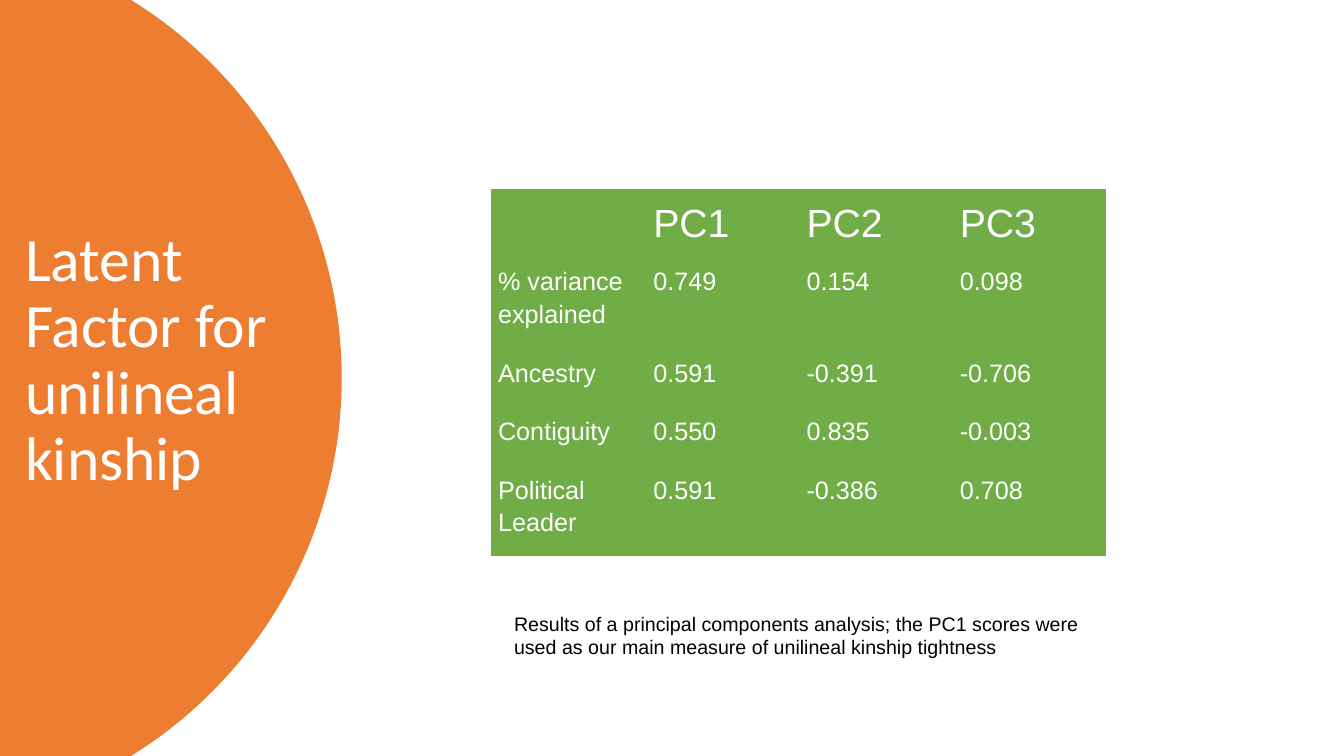
import math

import pptx
import pptx.dml.color
import pptx.enum.text
import pptx.util

COLOURS = {"orange": "ED7D31", "green": "70AD47", "white": "FFFFFF", "black": "000000"}
PX = 9144
PLAIN_TABLE_STYLE = "{2D5ABB26-0587-4C30-8999-92F81FD0307C}"


def px(length):
    return pptx.util.Emu(round(length * PX))


def colour(name):
    return pptx.dml.color.RGBColor.from_string(COLOURS[name])


class SlideBuilder:
    def __init__(self, deck):
        self.page = deck.slides.add_slide(deck.slide_layouts[6])

    def style(self, para, size, font, ink, spacing=1.0):
        para.line_spacing = spacing
        for item in (para, *para.runs):
            item.font.size = pptx.util.Pt(size)
            item.font.name = font
            item.font.color.rgb = colour(ink)

    def rounded_panel(self, left, start, radius, centre_x, height, fill):
        middle = height / 2
        limit = math.asin(middle / radius)
        steps = 120
        angles = [limit * (2 * step / steps - 1) for step in range(steps + 1)]
        points = [
            (px(centre_x + radius * math.cos(angle)), px(middle + radius * math.sin(angle)))
            for angle in angles
        ]
        outline = self.page.shapes.build_freeform(px(left), px(start))
        outline.add_line_segments(points + [(px(left), px(height))])
        panel = outline.convert_to_shape()
        panel.shadow.inherit = False
        panel.fill.solid()
        panel.fill.fore_color.rgb = colour(fill)
        panel.line.fill.background()

    def text(self, words, place, size, font, ink, anchor="TOP", spacing=1.0):
        box = self.page.shapes.add_textbox(*map(px, place))
        frame = box.text_frame
        frame.word_wrap = True
        frame.vertical_anchor = pptx.enum.text.MSO_ANCHOR[anchor]
        frame.text = words
        for para in frame.paragraphs:
            self.style(para, size, font, ink, spacing)

    def table(self, rows, left, top, widths, heights, fill, ink):
        frame = self.page.shapes.add_table(
            len(rows), len(widths), px(left), px(top), px(sum(widths)), px(sum(heights))
        )
        table = frame.table
        table.first_row = table.horz_banding = False
        for style_id in frame.element.iter("{*}tableStyleId"):
            style_id.text = PLAIN_TABLE_STYLE
        for column, width in zip(table.columns, widths):
            column.width = px(width)
        for index, (row, height) in enumerate(zip(rows, heights)):
            table.rows[index].height = px(height)
            size = 18 if index else 28
            for cell, words in zip(table.rows[index].cells, row):
                cell.margin_left = cell.margin_right = px(7)
                cell.margin_top = cell.margin_bottom = px(7)
                cell.fill.solid()
                cell.fill.fore_color.rgb = colour(fill)
                cell.text = words
                self.style(cell.text_frame.paragraphs[0], size, "Arial", ink, 1.15)


def main():
    deck = pptx.Presentation()
    deck.slide_width, deck.slide_height = px(1333), px(750)
    slide = SlideBuilder(deck)
    slide.rounded_panel(-117, 0, 441, -102, 750, "orange")
    slide.text(
        "Latent\vFactor for unilineal kinship",
        (15, 114, 350, 488), 44, "Calibri", "white", "MIDDLE", 0.9,
    )
    loadings = [
        ("", "PC1", "PC2", "PC3"),
        ("% variance explained", "0.749", "0.154", "0.098"),
        ("Ancestry", "0.591", "-0.391", "-0.706"),
        ("Contiguity", "0.550", "0.835", "-0.003"),
        ("Political Leader", "0.591", "-0.386", "0.708"),
    ]
    slide.table(
        loadings, 487, 187, [154] + [152] * 3, [58, 91, 58, 58, 90], "green", "white"
    )
    slide.text(
        "Results of a principal components analysis; the PC1 scores were used as our "
        "main measure of unilineal kinship tightness",
        (500, 602, 624, 57), 14, "Arial", "black",
    )
    deck.save("out.pptx")


if __name__ == "__main__":
    main()
